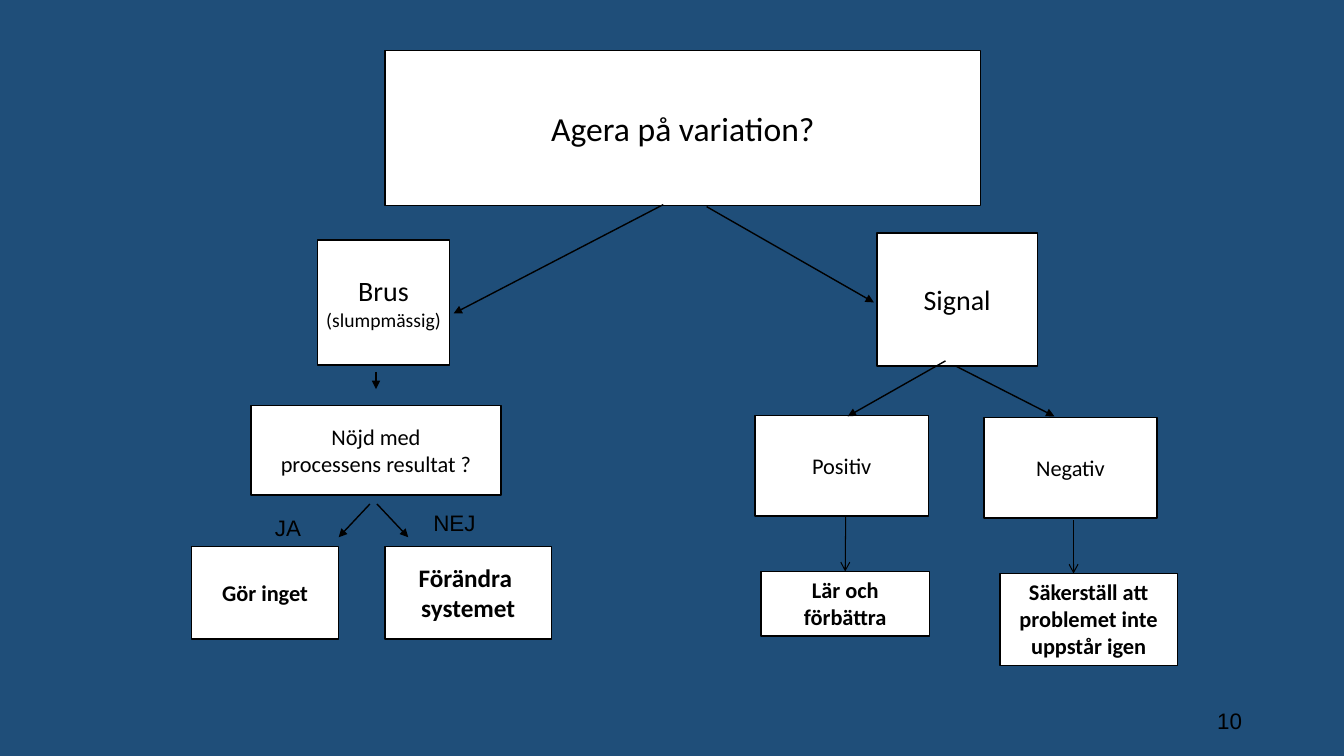
from lxml import etree
from pptx import Presentation
from pptx import util as u
from pptx.dml.color import RGBColor
from pptx.enum import shapes, text
from pptx.oxml import ns

NAVY = RGBColor(0x1F, 0x4E, 0x79)
WHITE = RGBColor(0xFF, 0xFF, 0xFF)
BLACK = RGBColor(0, 0, 0)
CELL = u.Inches(0.1)  # the grid has 133.3 columns and 75 rows


def cells(*counts):
    return [round(count * CELL) for count in counts]


class DecisionTree:
    box_font, label_font = "Calibri", "Arial"

    def __init__(self, slide):
        self.slide = slide
        slide.background.fill.solid()
        slide.background.fill.fore_color.rgb = NAVY

    def set_lines(self, frame, lines, sizes, font, align, bold=False):
        frame.text = "\n".join(lines)
        for paragraph, size in zip(frame.paragraphs, sizes):
            paragraph.alignment = align
            paragraph.font.name = font
            paragraph.font.size = u.Pt(size)
            paragraph.font.bold = bold
            paragraph.font.color.rgb = BLACK

    def box(self, area, lines, sizes, bold=False, grow=False):
        box = self.slide.shapes.add_shape(shapes.MSO_SHAPE.RECTANGLE, *cells(*area))
        box.shadow.inherit = False
        box.fill.solid()
        box.fill.fore_color.rgb = WHITE
        box.line.color.rgb = BLACK
        box.line.width = u.Pt(1)
        frame = box.text_frame
        frame.word_wrap = grow
        frame.vertical_anchor = text.MSO_ANCHOR.TOP if grow else text.MSO_ANCHOR.MIDDLE
        if grow:
            frame.auto_size = text.MSO_AUTO_SIZE.SHAPE_TO_FIT_TEXT
        self.set_lines(frame, lines, sizes, self.box_font, text.PP_ALIGN.CENTER, bold)
        return box

    def label(self, area, words, align=text.PP_ALIGN.LEFT, anchor=text.MSO_ANCHOR.TOP, wrap=False):
        frame = self.slide.shapes.add_textbox(*cells(*area)).text_frame
        frame.word_wrap = wrap
        frame.vertical_anchor = anchor
        self.set_lines(frame, [words], [16], self.label_font, align)

    def arrow(self, start, end, head="triangle", width=1):
        arrow = self.slide.shapes.add_connector(
            shapes.MSO_CONNECTOR.STRAIGHT, *cells(*start, *end))
        arrow.line.color.rgb = BLACK
        arrow.line.width = u.Pt(width)
        outline = arrow._element.spPr.find(ns.qn("a:ln"))
        etree.SubElement(outline, ns.qn("a:tailEnd"), type=head)
        etree.SubElement(arrow._element.spPr, ns.qn("a:effectLst"))
        return arrow


def main():
    deck = Presentation()
    deck.slide_width, deck.slide_height = cells(133.33, 75)
    tree = DecisionTree(deck.slides.add_slide(deck.slide_layouts[6]))

    # Slide number
    tree.label((94.2, 69.5, 30, 4), "10", text.PP_ALIGN.RIGHT, text.MSO_ANCHOR.MIDDLE, wrap=True)

    # Question and its two branches
    tree.box((38.2, 5, 59.1, 15.4), ["Agera på variation?"], [24])
    tree.arrow((65.8, 20.3), (45, 31.1))
    tree.arrow((70.1, 20.5), (86.7, 30))

    # Noise branch
    tree.box((31.5, 23.8, 13.1, 12.4), ["Brus", "(slumpmässig)"], [20, 14])
    tree.arrow((37.3, 36.9), (37.3, 38.6))
    tree.box((24.9, 40.2, 24.8, 8.9), ["Nöjd med", "processens resultat ?"], [16, 16])
    tree.arrow((36.7, 50), (33.6, 53.3))
    tree.arrow((37.4, 50), (40.5, 53.3))
    tree.label((26.3, 50.5, 4.6, 3.7), "JA")
    tree.label((42, 50, 6.2, 3.7), "NEJ")
    tree.box((19, 54.2, 14.6, 9.2), ["Gör inget"], [16], bold=True)
    tree.box((38.2, 54.2, 16.5, 9.2), ["Förändra ", "systemet"], [18, 18], bold=True)

    # Signal branch: the arrow to the right starts behind the box
    fork = (93.8, 35.8)
    tree.arrow(fork, (104.6, 41.3))
    tree.box((87, 23.1, 15.9, 13.2), ["Signal"], [20])
    tree.box((74.9, 41.2, 17.2, 10), ["Positiv"], [16])
    tree.box((97.6, 41.4, 17.2, 10), ["Negativ"], [16])
    tree.arrow(fork, (84.1, 41.3))

    # Actions on a signal
    learn = tree.box((75.5, 56.7, 16.7, 6.4), ["Lär och förbättra"], [16], bold=True, grow=True)
    tree.box((99.2, 56.9, 17.6, 9.1), ["Säkerställ att problemet inte uppstår igen"], [16],
             bold=True, grow=True)
    to_learn = tree.arrow((83.9, 51.2), (83.9, 56.7), "arrow", 0.75)
    to_learn.end_connect(learn, 0)
    tree.arrow((106.5, 51.6), (106.5, 56.9), "arrow", 0.75)

    deck.save("out.pptx")


if __name__ == "__main__":
    main()
